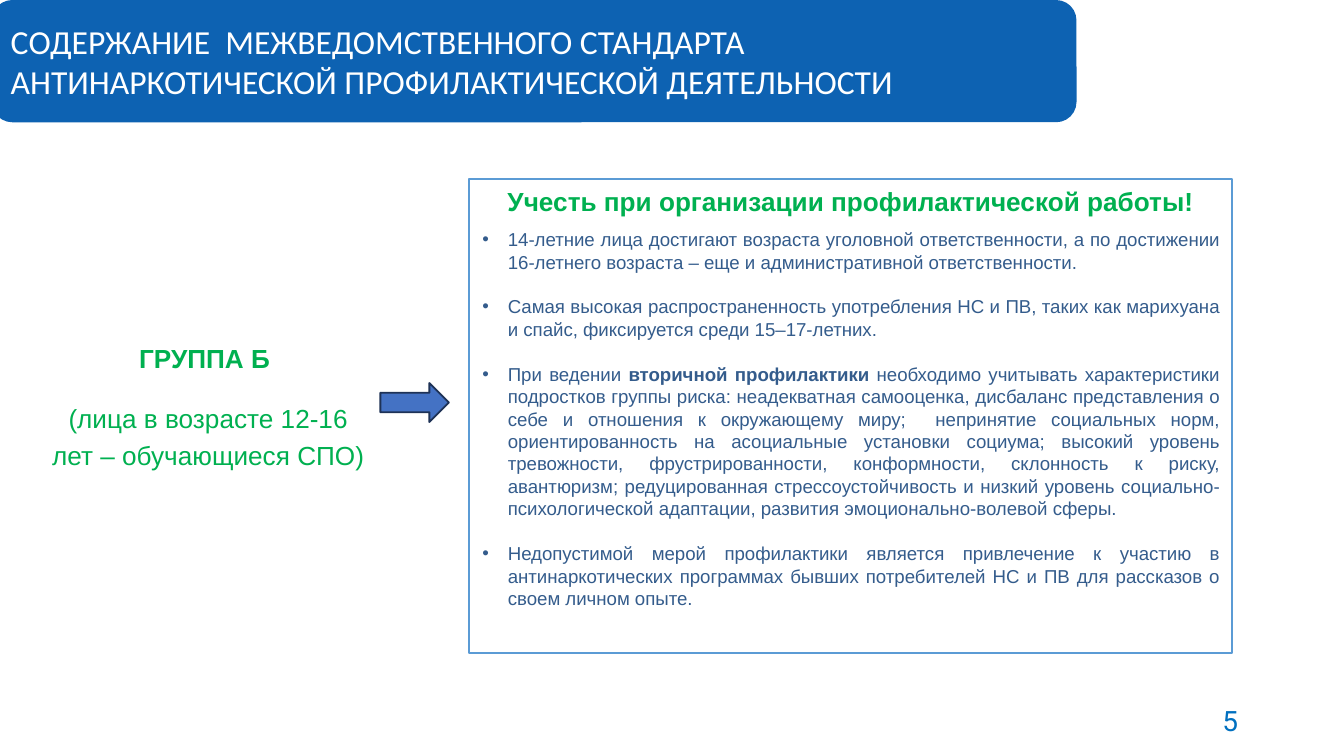
from pptx import Presentation
from pptx.dml.color import RGBColor
from pptx.enum.shapes import MSO_SHAPE as Shape
from pptx.enum.text import MSO_ANCHOR as Anchor, MSO_AUTO_SIZE as AutoSize, PP_ALIGN as Align
from pptx.oxml.ns import qn
from pptx.util import Inches, Pt

GREEN = "00B050"
SLATE = "345C8C"
WHITE = "FFFFFF"

ADVICE = [
    [("14-летние лица достигают возраста уголовной ответственности, а по достижении "
      "16-летнего возраста – еще и административной ответственности.", False)],
    [("Самая высокая распространенность употребления НС и ПВ, таких как марихуана "
      "и спайс, фиксируется среди 15–17-летних.", False)],
    [("При ведении ", False),
     ("вторичной профилактики ", True),
     ("необходимо учитывать характеристики подростков группы риска: неадекватная "
      "самооценка, дисбаланс представления о себе и отношения к окружающему миру;  "
      "непринятие социальных норм, ориентированность на асоциальные установки социума; "
      "высокий уровень тревожности, фрустрированности, конформности, склонность к риску, "
      "авантюризм; редуцированная стрессоустойчивость и низкий уровень "
      "социально-психологической адаптации, развития эмоционально-волевой сферы. ", False)],
    [("Недопустимой мерой профилактики является привлечение к участию в "
      "антинаркотических программах бывших потребителей НС и ПВ для рассказов о своем "
      "личном опыте.", False)],
]


def color(value):
    return RGBColor.from_string(value)


def add_span(para, text, size, tint, bold=False, font="Arial"):
    span = para.add_run()
    span.text = text
    span.font.name = font
    span.font.size = Pt(size)
    span.font.bold = bold
    span.font.color.rgb = color(tint)


def next_para(frame, align, before=0, after=0, spacing=1.0):
    """Return the empty first paragraph, or a new one, with its format set."""
    first = frame.paragraphs[0]
    is_new = bool(first.runs)
    para = frame.add_paragraph() if is_new else first
    para.alignment = align
    para.line_spacing = spacing
    para.space_before = Pt(before if is_new else 0)
    para.space_after = Pt(after)
    return para


def add_bullet(para, indent):
    props = para._p.get_or_add_pPr()
    props.set("marL", str(Inches(indent)))
    props.set("indent", str(Inches(-indent)))
    bullet_font = props.makeelement(qn("a:buFont"), {"typeface": "Arial"})
    bullet = props.makeelement(qn("a:buChar"), {"char": "•"})
    props.extend([bullet_font, bullet])


def add_block(page, kind, left, top, width, height, fill, line=None):
    block = page.shapes.add_shape(
        kind, Inches(left), Inches(top), Inches(width), Inches(height))
    block.shadow.inherit = False
    block.fill.solid()
    block.fill.fore_color.rgb = color(fill)
    if line:
        block.line.color.rgb = color(line)
        block.line.width = Pt(1)
    else:
        block.line.fill.background()
    return block


def add_text_box(page, left, top, width, height, anchor=Anchor.TOP):
    box = page.shapes.add_textbox(
        Inches(left), Inches(top), Inches(width), Inches(height))
    box.text_frame.word_wrap = True
    box.text_frame.vertical_anchor = anchor
    return box.text_frame


def add_header(page, left, top, width, height):
    bar = add_block(page, Shape.ROUNDED_RECTANGLE, left, top, width, height, "0D62B2")
    title = page.shapes.title
    # The bar is drawn first so that the title lies on top of it.
    title._element.addprevious(bar._element)
    inset = 0.04
    title.left, title.top = Inches(left + inset), Inches(top)
    title.width, title.height = Inches(width - 2 * inset), Inches(height)
    frame = title.text_frame
    frame.word_wrap = True
    frame.auto_size = AutoSize.NONE
    frame.vertical_anchor = Anchor.MIDDLE
    add_span(next_para(frame, Align.LEFT),
             "СОДЕРЖАНИЕ  МЕЖВЕДОМСТВЕННОГО СТАНДАРТА "
             "АНТИНАРКОТИЧЕСКОЙ ПРОФИЛАКТИЧЕСКОЙ ДЕЯТЕЛЬНОСТИ",
             18, WHITE, font="Calibri")


def add_group_label(page, left, top, width, height):
    frame = add_text_box(page, left, top, width, height)
    for text, bold in [("ГРУППА Б ", True),
                       ("(лица в возрасте 12-16 лет – обучающиеся СПО)", False)]:
        para = next_para(frame, Align.CENTER, before=6, after=6, spacing=1.2)
        add_span(para, text, 14, GREEN, bold)


def add_advice(page, left, top, width, height):
    panel = add_block(page, Shape.RECTANGLE, left, top, width, height, WHITE, "5B9BD5")
    frame = panel.text_frame
    frame.word_wrap = True
    frame.vertical_anchor = Anchor.TOP
    add_span(next_para(frame, Align.CENTER),
             "Учесть при организации профилактической работы!", 14, GREEN, bold=True)
    for spans in ADVICE:
        para = next_para(frame, Align.JUSTIFY, before=6, after=6)
        add_bullet(para, 0.19)
        para.font.size = Pt(10)
        para.font.color.rgb = color(SLATE)
        for text, bold in spans:
            add_span(para, text, 10, SLATE, bold)


def add_page_number(page, left, top, width, height):
    frame = add_text_box(page, left, top, width, height, Anchor.MIDDLE)
    add_span(next_para(frame, Align.RIGHT), "5", 15, "0070C0", font="Roboto")


def main():
    deck = Presentation()
    deck.slide_width = Inches(10)
    deck.slide_height = deck.slide_width * 9 // 16
    page = deck.slides.add_slide(deck.slide_layouts[5])
    add_page_number(page, 7.06, 5.21, 2.25, 0.3)
    add_header(page, -0.06, 0, 8.07, 0.91)
    add_group_label(page, 0.27, 2.45, 2.56, 1.09)
    add_advice(page, 3.49, 1.33, 5.68, 3.53)
    add_block(page, Shape.RIGHT_ARROW, 2.83, 2.85, 0.51, 0.29, "4472C4", "1E3256")
    deck.save("out.pptx")


if __name__ == "__main__":
    main()
